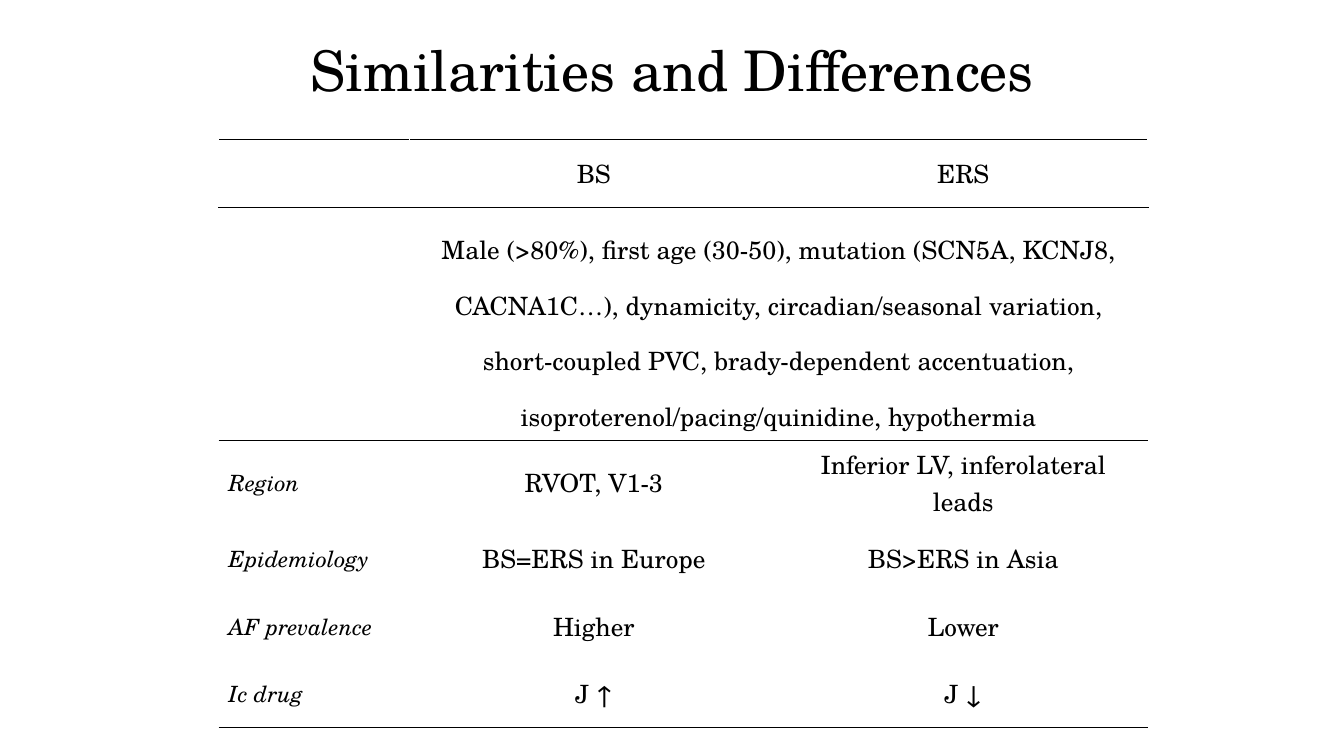
from lxml import etree
from pptx import Presentation
from pptx.dml.color import RGBColor
from pptx.enum import text
from pptx.oxml.ns import qn
from pptx.util import Cm, Pt

BLACK = RGBColor(0, 0, 0)
WHITE = RGBColor(255, 255, 255)
FONT = "TeX Gyre Schola"
PLAIN_STYLE = "{2D5ABB26-0587-4C30-8999-92F81FD0307C}"
SIDES = ("lnL", "lnR", "lnT", "lnB")

COL_WIDTHS = (4.8, 9.31, 9.31)
ROW_HEIGHTS = (1.7, 5.87, 2.14, 1.7, 1.7, 1.7)
SHARED_ROW = 1
RULED_ABOVE = (0, 1, 2)
RULED_BELOW = (0, 1, 5)
ROWS = (
    ("", "BS", "ERS"),
    ("", "Male (>80%), first age (30-50), mutation (SCN5A, KCNJ8, "
         "CACNA1C…), dynamicity, circadian/seasonal variation, "
         "short-coupled PVC, brady-dependent accentuation, "
         "isoproterenol/pacing/quinidine, hypothermia", ""),
    ("Region", "RVOT, V1-3", "Inferior LV, inferolateral leads"),
    ("Epidemiology", "BS=ERS in Europe", "BS>ERS in Asia"),
    ("AF prevalence", "Higher", "Lower"),
    ("Ic drug", "J ↑", "J ↓"),
)


def add_run(p, words, size, italic=False):
    r = p.add_run()
    r.text = words
    r.font.name = FONT
    r.font.size = Pt(size)
    r.font.italic = italic
    r.font.color.rgb = BLACK


def set_borders(cell, colours):
    """Draw 1 pt borders on the sides with a colour and none elsewhere."""
    tc_pr = cell._tc.get_or_add_tcPr()
    for i, side in enumerate(SIDES):
        ln = etree.Element(qn("a:" + side), w=str(Pt(1)))
        if side in colours:
            fill = etree.SubElement(ln, qn("a:solidFill"))
            etree.SubElement(fill, qn("a:srgbClr"), val=str(colours[side]))
        else:
            etree.SubElement(ln, qn("a:noFill"))
        tc_pr.insert(i, ln)


def add_title(s, left, top, width, height):
    tf = s.shapes.add_textbox(left, top, width, height).text_frame
    tf.word_wrap = True
    tf.vertical_anchor = text.MSO_ANCHOR.TOP
    p = tf.paragraphs[0]
    p.alignment = text.PP_ALIGN.CENTER
    add_run(p, "Similarities and Differences", 40)


def fill_cell(cell, row, col):
    cell.fill.solid()
    cell.fill.fore_color.rgb = WHITE
    cell.vertical_anchor = text.MSO_ANCHOR.MIDDLE

    # Words: italic row labels, centred values
    words = ROWS[row][col]
    if words:
        p = cell.text_frame.paragraphs[0]
        if col == 0:
            add_run(p, words, 16, italic=True)
        else:
            p.alignment = text.PP_ALIGN.CENTER
            add_run(p, words, 18)
        if row == SHARED_ROW:
            p.line_spacing = 1.5

    # Black rules between groups, white sides in the header
    colours = {}
    if row in RULED_ABOVE:
        colours["lnT"] = BLACK
    if row in RULED_BELOW:
        colours["lnB"] = BLACK
    if row == 0:
        if col < 2:
            colours["lnL"] = WHITE
        if col != 1:
            colours["lnR"] = WHITE
    set_borders(cell, colours)


def add_comparison(s, left, top, width, height):
    table = s.shapes.add_table(len(ROWS), len(COL_WIDTHS),
                               left, top, width, height).table
    table.first_row = table.horz_banding = False
    table._tbl.tblPr.find(qn("a:tableStyleId")).text = PLAIN_STYLE
    for column, w in zip(table.columns, COL_WIDTHS):
        column.width = Cm(w)
    for table_row, h in zip(table.rows, ROW_HEIGHTS):
        table_row.height = Cm(h)

    table.cell(SHARED_ROW, 1).merge(table.cell(SHARED_ROW, 2))
    for row in range(len(ROWS)):
        for col in range(len(COL_WIDTHS)):
            fill_cell(table.cell(row, col), row, col)


def main():
    prs = Presentation()
    prs.slide_width, prs.slide_height = Cm(33.87), Cm(19.05)
    s = prs.slides.add_slide(prs.slide_layouts[6])
    s.background.fill.solid()
    s.background.fill.fore_color.rgb = WHITE

    add_title(s, Cm(5.51), Cm(0.76), Cm(22.86), Cm(2.77))
    add_comparison(s, Cm(5.51), Cm(3.52), Cm(sum(COL_WIDTHS)), Cm(sum(ROW_HEIGHTS)))
    prs.save("out.pptx")


if __name__ == "__main__":
    main()
